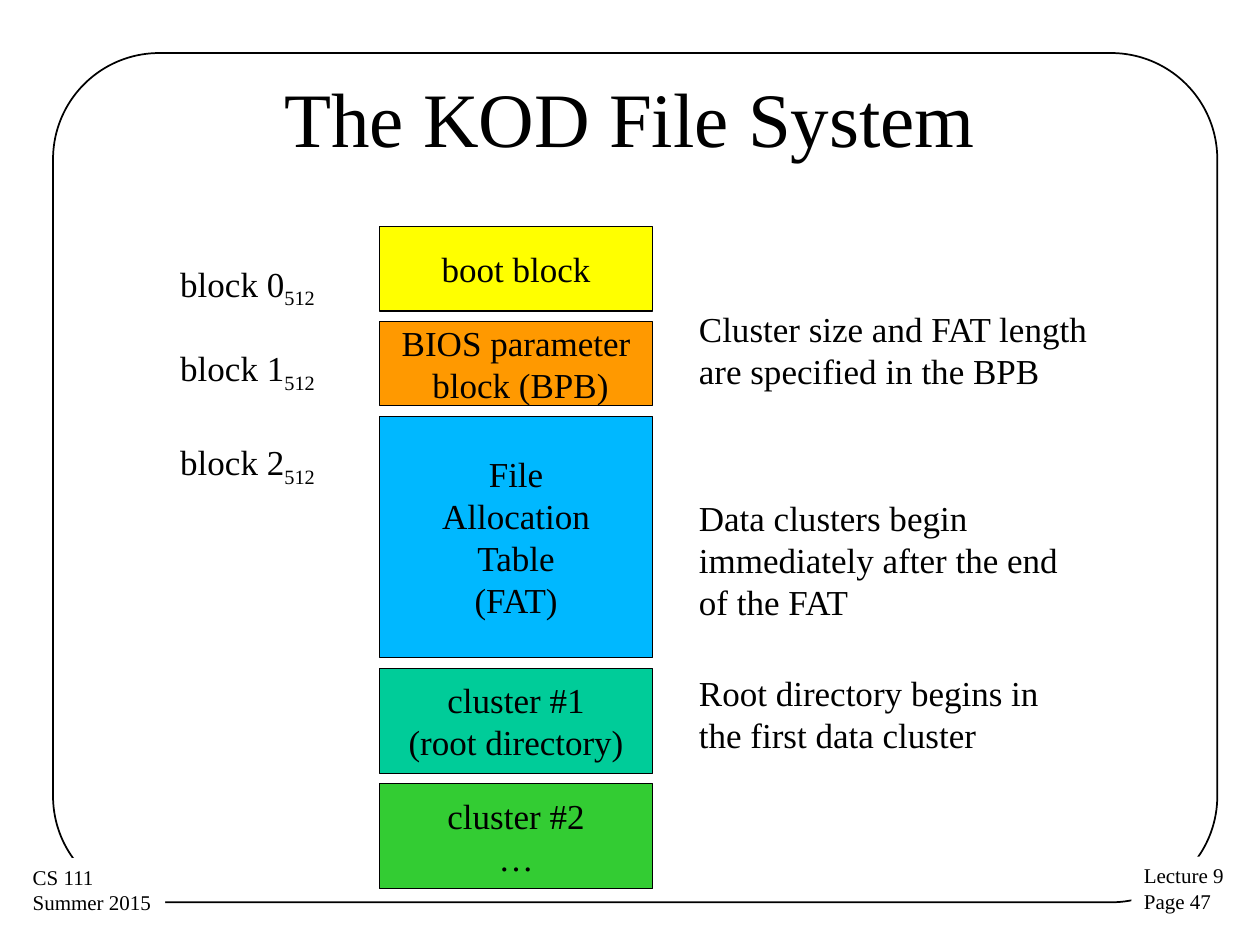
import pptx
import pptx.util
import pptx.dml.color
import pptx.enum.shapes
import pptx.enum.text
from dataclasses import dataclass

Cm = pptx.util.Cm
Align = pptx.enum.text.PP_ALIGN
Anchor = pptx.enum.text.MSO_ANCHOR
Shape = pptx.enum.shapes.MSO_SHAPE


@dataclass(frozen=True)
class Theme:
    font: str = "Times New Roman"
    ink: str = "000000"
    paper: str = "FFFFFF"
    boot: str = "FFFF00"
    bios: str = "FF9900"
    fat: str = "00B8FF"
    root: str = "00CC99"
    data: str = "33CC33"
    title_size: int = 44
    body_size: int = 20
    footer_size: int = 12
    frame_line: float = 1
    block_line: float = 0.75


theme = Theme()


def write(shape, lines, size, align=Align.LEFT, anchor=Anchor.TOP, wrap=True, subscript=""):
    frame = shape.text_frame
    frame.text = "\n".join(lines)
    for name, value in {"word_wrap": wrap, "vertical_anchor": anchor}.items():
        setattr(frame, name, value)
    for para in frame.paragraphs:
        para.alignment = align
        if subscript:
            span = para.add_run()
            span.text = subscript
            span.font._element.set("baseline", "-25000")
        for span in para.runs:
            for name, value in {"name": theme.font, "size": pptx.util.Pt(size)}.items():
                setattr(span.font, name, value)
            span.font.color.rgb = pptx.dml.color.RGBColor.from_string(theme.ink)


def draw(kind, left, top, width, height, fill=None, line=None):
    shape = slide.shapes.add_shape(kind, Cm(left), Cm(top), Cm(width), Cm(height))
    shape.shadow.inherit = False
    if fill:
        shape.fill.solid()
        shape.fill.fore_color.rgb = pptx.dml.color.RGBColor.from_string(fill)
    else:
        shape.fill.background()
    if line:
        shape.line.color.rgb = pptx.dml.color.RGBColor.from_string(theme.ink)
        shape.line.width = pptx.util.Pt(line)
    else:
        shape.line.fill.background()
    return shape


deck = pptx.Presentation()
deck.slide_width, deck.slide_height = Cm(25.4), Cm(19.05)
slide = deck.slides.add_slide(deck.slide_layouts[5])

border = draw(Shape.ROUNDED_RECTANGLE, 1.07, 1.07, 23.47, 17.12, line=theme.frame_line)
border.adjustments[0] = 0.125

footers = [
    (22.81, 17.27, 2.13, ["Lecture 9", "Page 47"]),
    (0.41, 17.3, 2.92, ["CS 111", "Summer 2015"]),
]
for left, top, width, lines in footers:
    footer = draw(Shape.RECTANGLE, left, top, width, 1.3, fill=theme.paper)
    write(footer, lines, theme.footer_size, wrap=False)

title = slide.shapes.title
placement = {"left": Cm(1.27), "top": Cm(0.76), "width": Cm(22.86), "height": Cm(3.18)}
for name, value in placement.items():
    setattr(title, name, value)
write(title, ["The KOD File System"], theme.title_size, Align.CENTER, Anchor.MIDDLE)
slide.shapes._spTree.append(title._element)

blocks = [
    (1.7, theme.boot, ["boot block"]),
    (1.7, theme.bios, ["BIOS parameter", " block (BPB)"]),
    (4.87, theme.fat, ["File", "Allocation\vTable", "(FAT)"]),
    (2.12, theme.root, ["cluster #1", "(root directory)"]),
    (2.12, theme.data, ["cluster #2", "…"]),
]
block_gap = 0.21
top = 4.57
for height, fill, lines in blocks:
    block = draw(Shape.RECTANGLE, 7.65, top, 5.51, height, fill, theme.block_line)
    write(block, lines, theme.body_size, Align.CENTER, Anchor.MIDDLE, wrap=False)
    top += height + block_gap

for number, top in enumerate([5.16, 6.86, 8.76]):
    box = slide.shapes.add_textbox(Cm(1.52), Cm(top), Cm(5.08), Cm(1.1))
    write(box, [f"block {number}"], theme.body_size, Align.RIGHT, subscript="512")

remarks = [
    (6.07, 9.27, 1.96, "Cluster size and FAT length are specified in the BPB"),
    (9.88, 8.26, 2.82, "Data clusters begin immediately after the end of the FAT"),
    (13.41, 8.26, 1.96, "Root directory begins in the first data cluster"),
]
for top, width, height, remark in remarks:
    box = slide.shapes.add_textbox(Cm(13.84), Cm(top), Cm(width), Cm(height))
    write(box, [remark], theme.body_size)

deck.save("out.pptx")
